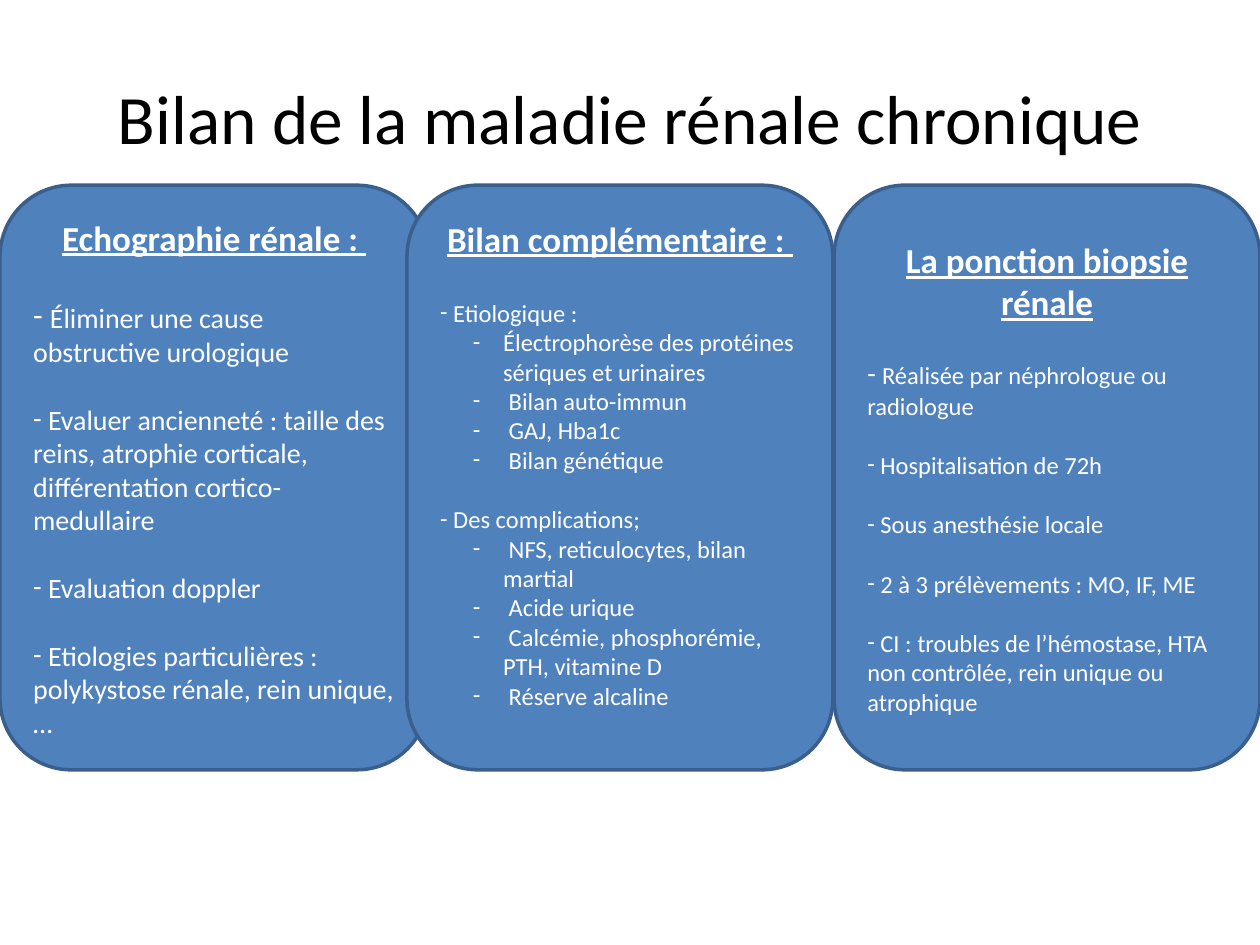
import lxml.etree
import pptx
import pptx.dml.color
import pptx.enum.shapes
import pptx.enum.text
import pptx.oxml.ns
import pptx.util
from pptx.util import Inches

COLORS = {"title": "000000", "panel": "4F81BD", "border": "3A5F8C", "text": "FFFFFF"}
FONT = "Calibri"
LINE_HEIGHT = 1.22

ECHOGRAPHY = [
    (0, 18, [(" ", 18), ("Éliminer une cause obstructive urologique", 16)]),
    (0, 16, [(" Evaluer ancienneté : taille des reins, atrophie corticale, "
              "différentation cortico-medullaire", 16)]),
    (0, 16, [(" Evaluation doppler", 16)]),
    (0, 16, [(" Etiologies particulières : polykystose rénale, rein unique, …", 16)]),
]
WORKUP = [
    (0, 18, [(" Etiologique :", 14)]),
    (1, 0, [("Électrophorèse des protéines sériques et urinaires", 14)]),
    (1, 0, [(" Bilan auto-immun", 14)]),
    (1, 0, [(" GAJ, Hba1c", 14)]),
    (1, 0, [(" Bilan génétique", 14)]),
    (0, 14, [(" Des complications;", 14)]),
    (1, 0, [(" NFS, reticulocytes, bilan martial", 14)]),
    (1, 0, [(" Acide urique", 14)]),
    (1, 0, [(" Calcémie, phosphorémie, PTH, vitamine D", 14)]),
    (1, 0, [(" Réserve alcaline", 14)]),
]
BIOPSY = [
    (0, 16, [(" ", 16), ("Réalisée par néphrologue ou radiologue", 14)]),
    (0, 14, [(" Hospitalisation de 72h", 14)]),
    (0, 14, [(" Sous anesthésie locale", 14)]),
    (0, 14, [(" 2 à 3 prélèvements : MO, IF, ME", 14)]),
    (0, 14, [(" CI : troubles de l’hémostase, HTA non contrôlée, rein unique ou atrophique", 14)]),
]
PANELS = [
    (0, 3.4, "Echographie rénale : ", ECHOGRAPHY, 0.05),
    (3.23, 3.38, "Bilan complémentaire : ", WORKUP, 0.27),
    (6.62, 3.38, "La ponction biopsie rénale", BIOPSY, 0.05),
]


def rgb(name):
    """Return the named palette colour."""
    return pptx.dml.color.RGBColor.from_string(COLORS[name])


def add_run(paragraph, text, size, color, emphasis=False):
    """Append one run, bold and underlined when emphasised."""
    run = paragraph.add_run()
    run.text = text
    run.font.name = FONT
    run.font.size = pptx.util.Pt(size)
    run.font.color.rgb = rgb(color)
    run.font.bold = run.font.underline = emphasis


def add_dash(paragraph, level):
    """Give a paragraph a dash bullet, hanging on the second level."""
    properties = paragraph._p.get_or_add_pPr()
    properties.set("marL", str(Inches(0.5 * level)))
    properties.set("indent", str(Inches(-0.24 * level)))
    qn = pptx.oxml.ns.qn
    lxml.etree.SubElement(properties, qn("a:buFont")).set("typeface", FONT)
    lxml.etree.SubElement(properties, qn("a:buChar")).set("char", "-")


def add_title(slide, left, top, width, height):
    """Place the centred slide title."""
    frame = slide.shapes.add_textbox(
        Inches(left), Inches(top), Inches(width), Inches(height)).text_frame
    frame.word_wrap = True
    frame.vertical_anchor = pptx.enum.text.MSO_ANCHOR.MIDDLE
    paragraph = frame.paragraphs[0]
    paragraph.alignment = pptx.enum.text.PP_ALIGN.CENTER
    add_run(paragraph, "Bilan de la maladie rénale chronique", 39.6, "title")


def add_panel(slide, left, top, width, height, heading, items, bottom_inset):
    """Place a rounded panel with its heading and dashed items."""
    panel = slide.shapes.add_shape(
        pptx.enum.shapes.MSO_SHAPE.ROUNDED_RECTANGLE,
        Inches(left), Inches(top), Inches(width), Inches(height))
    panel.shadow.inherit = False
    panel.fill.solid()
    panel.fill.fore_color.rgb = rgb("panel")
    panel.line.color.rgb = rgb("border")
    panel.line.width = pptx.util.Pt(2)
    frame = panel.text_frame
    frame.word_wrap = True
    frame.vertical_anchor = pptx.enum.text.MSO_ANCHOR.MIDDLE
    frame.margin_bottom = Inches(bottom_inset)
    title = frame.paragraphs[0]
    title.alignment = pptx.enum.text.PP_ALIGN.CENTER
    add_run(title, heading, 20, "text", emphasis=True)
    for level, gap, runs in items:
        item = frame.add_paragraph()
        item.level = level
        add_dash(item, level)
        item.alignment = pptx.enum.text.PP_ALIGN.LEFT
        item.space_before = pptx.util.Pt(round(gap * LINE_HEIGHT, 1))
        for text, size in runs:
            add_run(item, text, size, "text")


def main():
    """Build and save the slide."""
    deck = pptx.Presentation()
    deck.slide_width, deck.slide_height = Inches(10), Inches(7.5)
    slide = deck.slides.add_slide(deck.slide_layouts[6])
    add_title(slide, 0.5, 0.3, 9, 1.25)
    for left, width, heading, items, bottom_inset in PANELS:
        add_panel(slide, left, 1.47, width, 4.64, heading, items, bottom_inset)
    deck.save("out.pptx")


if __name__ == "__main__":
    main()
